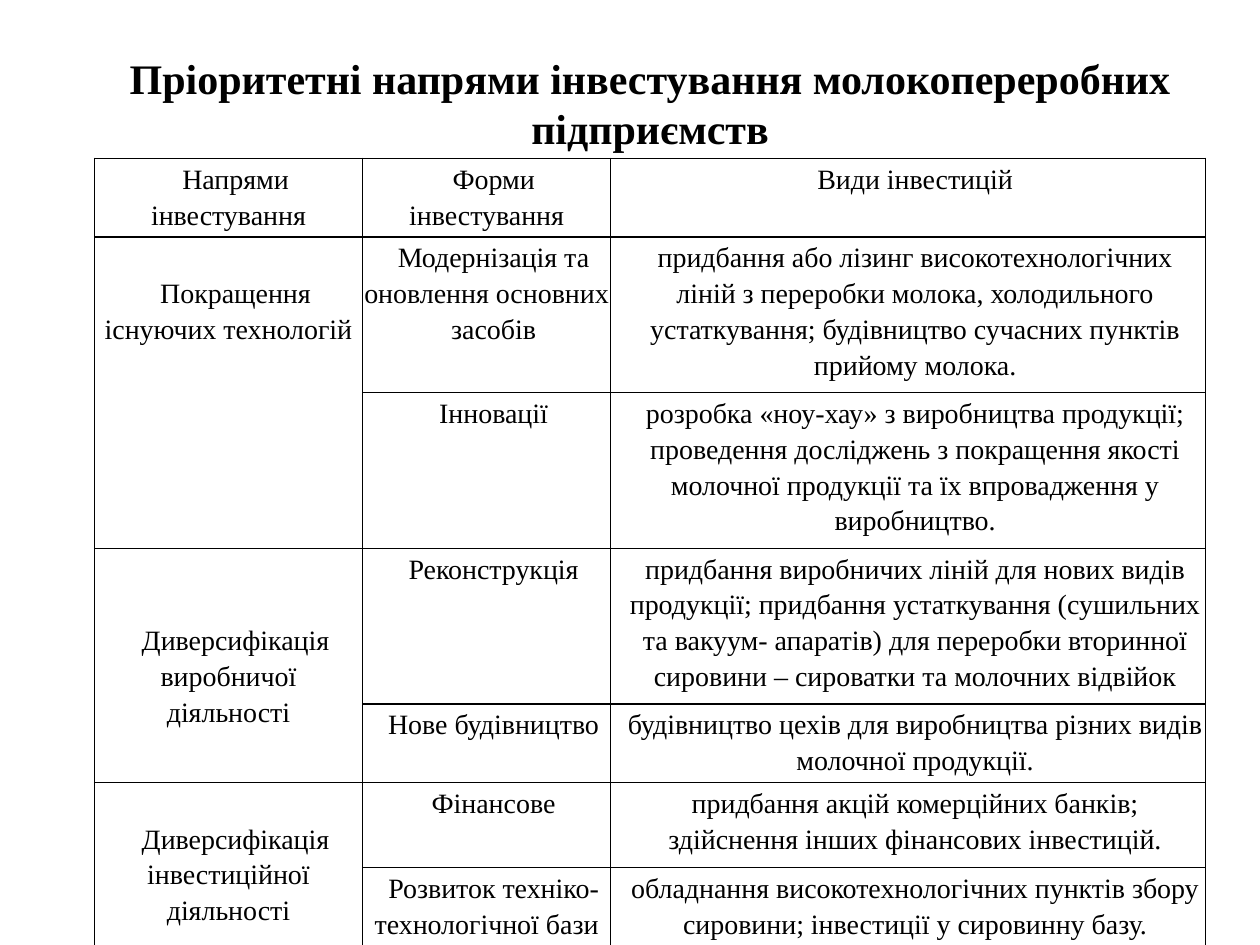
"""Build a slide with a table of investment priorities for dairy processors."""
from lxml import etree
from pptx import Presentation
from pptx.dml.color import RGBColor
from pptx.enum import text
from pptx.oxml import ns
from pptx.util import Pt

BLACK = RGBColor(0, 0, 0)
WHITE = RGBColor(255, 255, 255)
FONT = "Times New Roman"
LINE = 20.5
INDENT = 8

TITLE = "Пріоритетні напрями інвестування молокопереробних підприємств"
HEAD = ["Напрями інвестування", "Форми інвестування", "Види інвестицій"]
GROUPS = [
    ("Покращення існуючих технологій", 1, [
        ("Модернізація та оновлення основних\nзасобів",
         "придбання або лізинг високотехнологічних ліній з переробки молока, "
         "холодильного устаткування; будівництво сучасних пунктів прийому молока."),
        ("Інновації",
         "розробка «ноу-хау» з виробництва продукції;\n"
         "проведення досліджень з покращення якості молочної продукції "
         "та їх впровадження у виробництво."),
    ]),
    ("Диверсифікація виробничої діяльності", 2, [
        ("Реконструкція",
         "придбання виробничих ліній для нових видів продукції; придбання "
         "устаткування (сушильних та вакуум- апаратів) для переробки вторинної "
         "сировини – сироватки та молочних відвійок"),
        ("Нове будівництво",
         "будівництво цехів для виробництва різних видів\nмолочної продукції."),
    ]),
    ("Диверсифікація інвестиційної діяльності", 1, [
        ("Фінансове",
         "придбання акцій комерційних банків;\n"
         "здійснення інших фінансових інвестицій."),
        ("Розвиток техніко- технологічної бази",
         "обладнання високотехнологічних пунктів збору сировини; "
         "інвестиції у сировинну базу."),
    ]),
]
COLS = [153.2, 141.8, 340]
ROWS = [45, 88.6, 88.6, 89, 44.6, 48.6, 44.6]
LEFT, TOP, WIDE = 54, 90.5, sum(COLS)


def style(para, size, bold=False):
    para.alignment = text.PP_ALIGN.CENTER
    font = para.font
    font.name, font.size, font.bold = FONT, Pt(size), bold
    font.color.rgb = BLACK


def border(cell):
    props = cell._tc.get_or_add_tcPr()
    for i, side in enumerate(("lnL", "lnR", "lnT", "lnB")):
        line = etree.Element(ns.qn("a:" + side), w=str(Pt(1)))
        fill = etree.SubElement(line, ns.qn("a:solidFill"))
        etree.SubElement(fill, ns.qn("a:srgbClr"), val=str(BLACK))
        props.insert(i, line)


def write(cell, words, col, skip=0):
    cell.text = words
    cell.margin_left = cell.margin_right = Pt(0.7)
    cell.margin_top, cell.margin_bottom = Pt(0.7 + skip * LINE), 0
    for para in cell.text_frame.paragraphs:
        style(para, 16)
        para.line_spacing = 1.15
        props = para._p.get_or_add_pPr()
        left, first = (INDENT, 0) if col == 2 else (0, INDENT)
        props.set("marL", str(Pt(left)))
        props.set("indent", str(Pt(first)))


def main():
    prs = Presentation()
    prs.slide_width, prs.slide_height = Pt(720), Pt(540)
    slide = prs.slides.add_slide(prs.slide_layouts[6])

    box = slide.shapes.add_textbox(Pt(LEFT), Pt(26), Pt(WIDE), Pt(65.5))
    frame = box.text_frame
    frame.word_wrap = True
    frame.vertical_anchor = text.MSO_ANCHOR.MIDDLE
    frame.text = TITLE
    style(frame.paragraphs[0], 24, True)

    table = slide.shapes.add_table(len(ROWS), len(COLS), Pt(LEFT), Pt(TOP),
                                   Pt(WIDE), Pt(sum(ROWS))).table
    table.first_row = table.horz_banding = False
    for col, width in zip(table.columns, COLS):
        col.width = Pt(width)
    for row, height in zip(table.rows, ROWS):
        row.height = Pt(height)
    for cell in table.iter_cells():
        cell.fill.solid()
        cell.fill.fore_color.rgb = WHITE
        border(cell)

    for col, words in enumerate(HEAD):
        write(table.cell(0, col), words, col)
    row = 1
    for name, skip, forms in GROUPS:
        table.cell(row, 0).merge(table.cell(row + len(forms) - 1, 0))
        write(table.cell(row, 0), name, 0, skip)
        for pair in forms:
            for col, words in enumerate(pair, 1):
                write(table.cell(row, col), words, col)
            row += 1
    prs.save("out.pptx")


if __name__ == "__main__":
    main()
